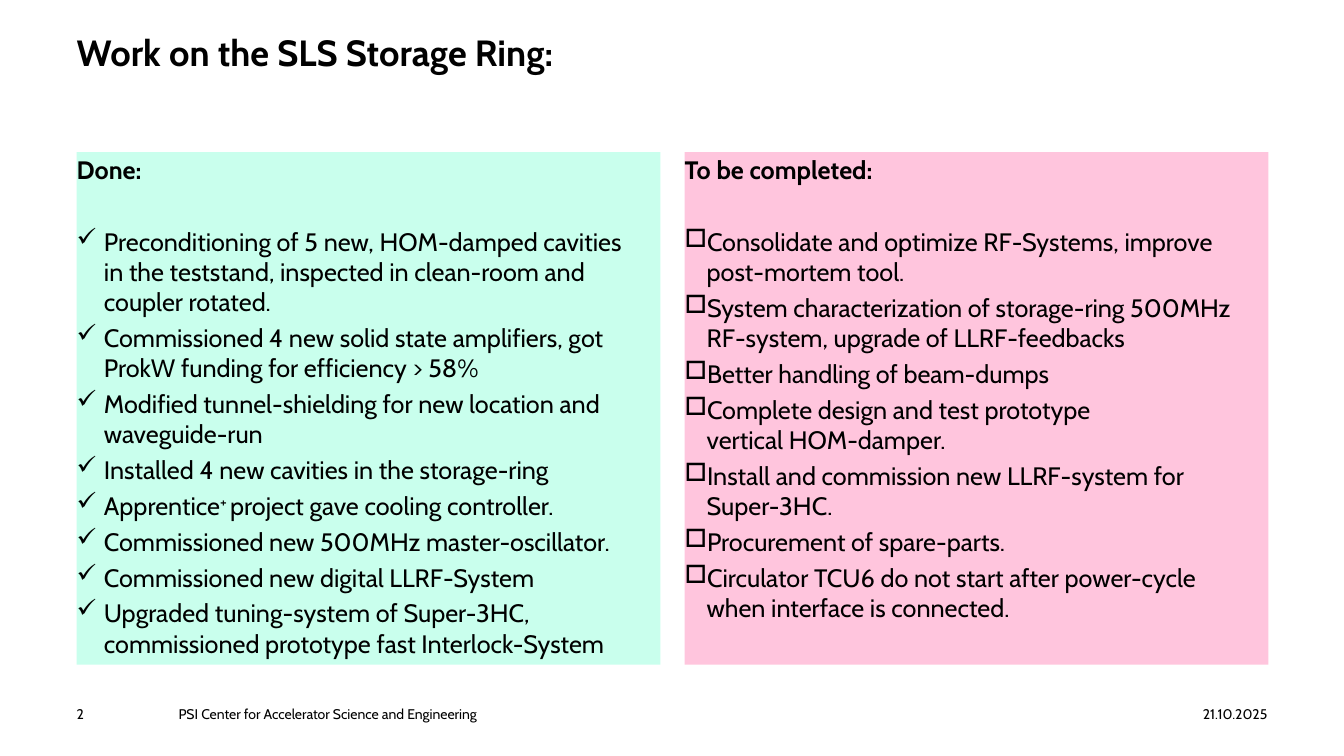
from pptx import Presentation
from pptx.dml.color import RGBColor
from pptx.enum.shapes import MSO_SHAPE
from pptx.enum.text import MSO_ANCHOR, PP_ALIGN
from pptx.util import Pt
from lxml import etree

RECT = MSO_SHAPE.RECTANGLE
TOP = MSO_ANCHOR.TOP
LEFT, RIGHT = PP_ALIGN.LEFT, PP_ALIGN.RIGHT
NS = "http://schemas.openxmlformats.org/drawingml/2006/main"
PX = 9525
THEME = {
    "font": "Cabin", "ink": "000000", "done": "C9FFED", "open": "FFC5DD",
    "title": 26, "body": 18, "foot": 10, "gap": 4, "lead": 29.6,
}


def frame(shape, top=0):
    """Set wrapping, anchor and insets, and return the text frame."""
    text = shape.text_frame
    text.word_wrap = True
    text.vertical_anchor = TOP
    text.margin_left = text.margin_right = text.margin_bottom = 0
    text.margin_top = top * PX
    return text


def write(box, text, size="body", bold=False, align=LEFT, before=0, mark=None, hang=0):
    """Add a paragraph; a newline breaks the line and ^ marks superscript."""
    para = box.paragraphs[0]
    if para.runs:
        para = box.add_paragraph()
    para.alignment = align
    para.space_before = Pt(before)
    if mark:
        props = para._p.get_or_add_pPr()
        props.set("marL", str(hang * PX))
        props.set("indent", str(-hang * PX))
        etree.SubElement(props, f"{{{NS}}}buChar", char=mark)
    for row, line in enumerate(text.split("\n")):
        if row:
            para.add_line_break()
        for part, words in enumerate(line.split("^")):
            run = para.add_run()
            run.text = words
            run.font.name = THEME["font"]
            run.font.size = Pt(THEME[size])
            run.font.bold = bold
            run.font.color.rgb = RGBColor.from_string(THEME["ink"])
            if part % 2:
                run._r.get_or_add_rPr().set("baseline", "30000")


deck = Presentation()
deck.slide_width, deck.slide_height = 1280 * PX, 720 * PX
slide = deck.slides.add_slide(deck.slide_layouts[6])

EDGE, WIDE, STEP = 73, 556, 579
panels = [
    ("Done:", "done", "✓", 26, [
        "Preconditioning of 5 new, HOM-damped cavities\n"
        "in the teststand, inspected in clean-room and\ncoupler rotated.",
        "Commissioned 4 new solid state amplifiers, got\n"
        "ProkW funding for efficiency > 58%",
        "Modified tunnel-shielding for new location and\nwaveguide-run",
        "Installed 4 new cavities in the storage-ring",
        "Apprentice^+ ^project gave cooling controller.",
        "Commissioned new 500MHz master-oscillator.",
        "Commissioned new digital LLRF-System",
        "Upgraded tuning-system of Super-3HC,\n"
        "commissioned prototype fast Interlock-System",
    ]),
    ("To be completed:", "open", "□", 21, [
        "Consolidate and optimize RF-Systems, improve\npost-mortem tool.",
        "System characterization of storage-ring 500MHz\n"
        "RF-system, upgrade of LLRF-feedbacks",
        "Better handling of beam-dumps",
        "Complete design and test prototype\nvertical HOM-damper.",
        "Install and commission new LLRF-system for\nSuper-3HC.",
        "Procurement of spare-parts.",
        "Circulator TCU6 do not start after power-cycle\n"
        "when interface is connected.",
    ]),
]
for col, (head, fill, mark, hang, items) in enumerate(panels):
    panel = slide.shapes.add_shape(
        RECT, (EDGE + col * STEP) * PX, 145 * PX, WIDE * PX, 488 * PX)
    panel.shadow.inherit = False
    panel.fill.solid()
    panel.fill.fore_color.rgb = RGBColor.from_string(THEME[fill])
    panel.line.fill.background()
    box = frame(panel, top=2)
    write(box, head, bold=True)
    for row, item in enumerate(items):
        before = THEME["gap"] if row else THEME["lead"]
        write(box, item, before=before, mark=mark, hang=hang)

labels = [
    ("Work on the SLS Storage Ring:", "title", True, LEFT, (EDGE, 29, 941, 85)),
    ("2", "foot", False, LEFT, (EDGE, 672, 74, 15)),
    ("PSI Center for Accelerator Science and Engineering", "foot", False, LEFT,
     (170, 672, 845, 15)),
    ("21.10.2025", "foot", False, RIGHT, (1037, 672, 170, 15)),
]
for text, size, bold, align, place in labels:
    label = slide.shapes.add_textbox(*(n * PX for n in place))
    write(frame(label), text, size=size, bold=bold, align=align)

deck.save("out.pptx")
